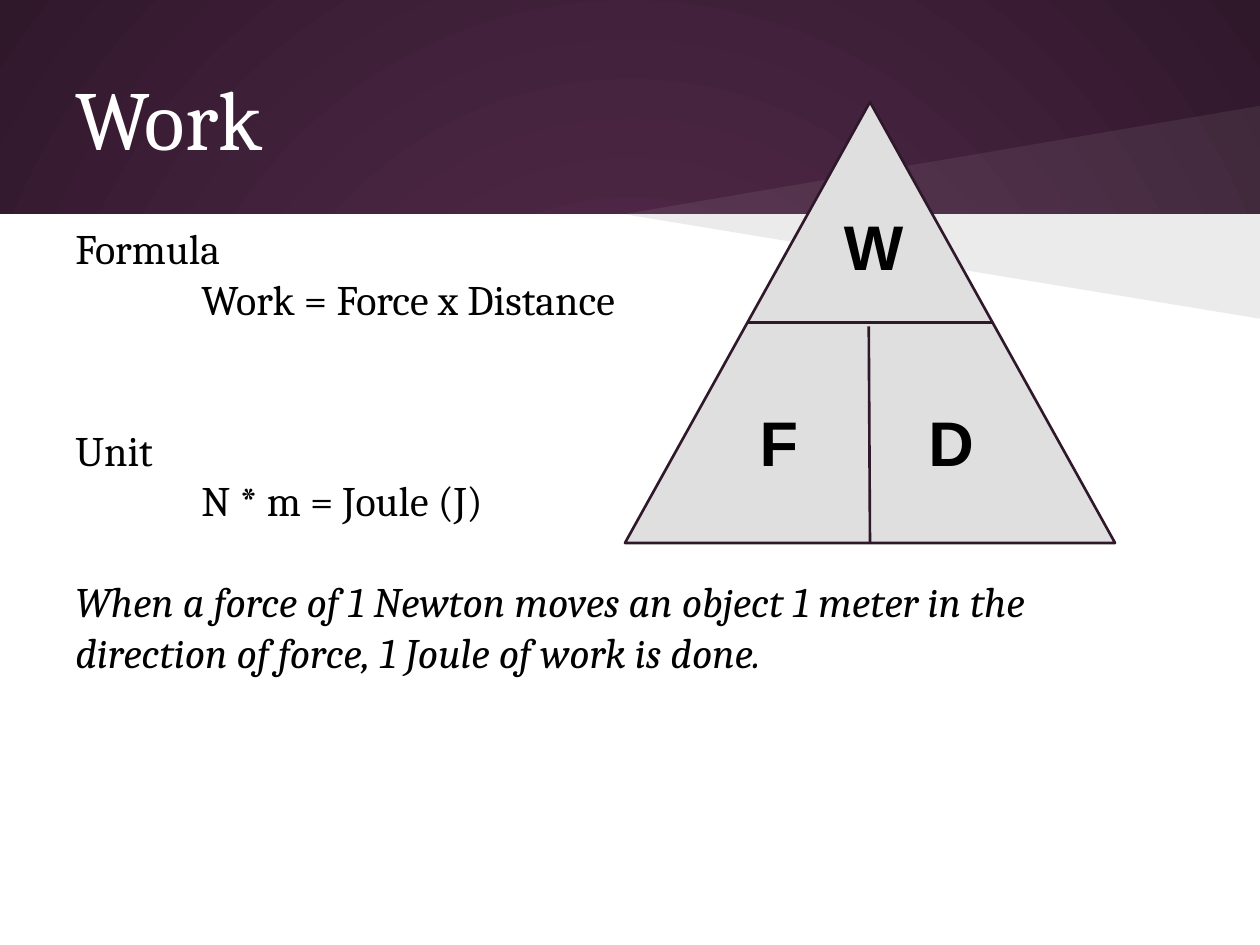
from lxml import etree
from pptx import Presentation, util as u
from pptx.dml.color import RGBColor
from pptx.enum import shapes, text
from pptx.oxml.ns import qn

WHITE = RGBColor(0xFF, 0xFF, 0xFF)
BLACK = RGBColor(0x00, 0x00, 0x00)
GREY = RGBColor(0xDF, 0xDF, 0xDF)
PLUM = RGBColor(0x59, 0x2D, 0x50)
DARK_PLUM = RGBColor(0x30, 0x18, 0x2B)

CELL = u.Inches(0.1)  # the grid has 100 columns and 75 rows
COLUMNS, ROWS = 100, 75
LINE_PITCH = 28.8  # points, one line of body text


def cells(*counts):
    return [u.Emu(round(count * CELL)) for count in counts]


class Canvas:
    """Holds the style and the current slide."""
    serif = {"name": "Cambria", "size": u.Pt(24)}
    title = {"name": "Cambria", "size": u.Pt(48)}
    letter = {"name": "Arial", "size": u.Pt(36), "bold": True}
    line_width = u.Pt(1.5)

    def __init__(self, deck):
        self.page = deck.slides.add_slide(deck.slide_layouts[6])

    def background(self, inner, outer):
        fill = self.page.background.fill
        fill.gradient()
        for stop, color in zip(fill.gradient_stops, (inner, outer)):
            stop.color.rgb = color
        gradient = self.page.element.find(".//" + qn("a:gradFill"))
        gradient.remove(gradient.find(qn("a:lin")))
        circle = etree.SubElement(gradient, qn("a:path"), path="circle")
        etree.SubElement(circle, qn("a:fillToRect"),
                         {side: "50000" for side in "ltrb"})

    def paint(self, shape, color, line=None, opacity=None):
        shape.shadow.inherit = False
        shape.fill.solid()
        shape.fill.fore_color.rgb = color
        if opacity is not None:
            tint = shape._element.spPr.find(".//" + qn("a:srgbClr"))
            etree.SubElement(tint, qn("a:alpha"), val=str(opacity * 1000))
        if line is None:
            shape.line.fill.background()
        else:
            shape.line.color.rgb = line
            shape.line.width = self.line_width

    def preset(self, kind, place, color, line=None):
        self.paint(self.page.shapes.add_shape(kind, *cells(*place)), color, line)

    def outline(self, points, color, opacity):
        start, *others = [cells(*point) for point in points]
        builder = self.page.shapes.build_freeform(*start)
        builder.add_line_segments(others)
        self.paint(builder.convert_to_shape(), color, opacity=opacity)

    def line(self, start, end, color):
        link = self.page.shapes.add_connector(
            shapes.MSO_CONNECTOR.STRAIGHT, *cells(*start, *end))
        link.line.color.rgb = color
        link.line.width = self.line_width
        etree.SubElement(link._element.spPr, qn("a:effectLst"))

    def text_box(self, place, lines, style, color=BLACK, anchor=text.MSO_ANCHOR.TOP):
        """Each line is (words, blank lines before, indent in cells, italic)."""
        frame = self.page.shapes.add_textbox(*cells(*place)).text_frame
        layout = {"word_wrap": True, "vertical_anchor": anchor}
        layout.update({f"margin_{side}": CELL
                       for side in ("left", "top", "right", "bottom")})
        for name, value in layout.items():
            setattr(frame, name, value)
        for index, (words, gap, indent, italic) in enumerate(lines):
            para = frame.add_paragraph() if index else frame.paragraphs[0]
            para.space_before = u.Pt(gap * LINE_PITCH)
            if indent:
                para._p.get_or_add_pPr().set("marL", str(indent * CELL))
            span = para.add_run()
            span.text = words
            for name, value in {**style, "italic": italic}.items():
                setattr(span.font, name, value)
            span.font.color.rgb = color


def main():
    deck = Presentation()
    deck.slide_width, deck.slide_height = cells(COLUMNS, ROWS)
    canvas = Canvas(deck)

    # Plum header above a white page, with two light beams
    header = 17
    canvas.background(PLUM, DARK_PLUM)
    canvas.preset(shapes.MSO_SHAPE.RECTANGLE,
                  (0, header, COLUMNS, ROWS - header), WHITE)
    for rise, color, opacity in ((-8.6, WHITE, 7), (8.3, BLACK, 8)):
        canvas.outline([(COLUMNS, header), (49.5, header),
                        (COLUMNS, header + rise)], color, opacity)

    # Title and body
    canvas.text_box((5, 3, 90, 12.5), [("Work", 0, 0, False)],
                    canvas.title, WHITE, text.MSO_ANCHOR.MIDDLE)
    canvas.text_box((5, 16.7, 90, 54.3), [
        ("Formula", 0, 0, False),
        ("Work = Force x Distance", 0, 10, False),
        ("Unit", 2, 0, False),
        ("N * m = Joule (J)", 0, 10, False),
        ("When a force of 1 Newton moves an object 1 meter in the "
         "direction of force, 1 Joule of work is done.", 1, 0, True),
    ], canvas.serif)

    # Formula triangle, split at half its height
    left, top, width, height = triangle = (49.6, 8.1, 38.9, 35)
    middle, split = left + width / 2, top + height / 2
    canvas.preset(shapes.MSO_SHAPE.ISOSCELES_TRIANGLE, triangle, GREY, DARK_PLUM)
    canvas.line((middle - width / 4, split), (middle + width / 4, split), DARK_PLUM)
    canvas.line((middle, top + height), (middle - 0.1, split + 0.3), DARK_PLUM)
    for words, column, row in (("W", 66, 15.5), ("F", 59.3, 31), ("D", 72.7, 31)):
        canvas.text_box((column, row, 6, 9), [(words, 0, 0, False)], canvas.letter)

    deck.save("out.pptx")


if __name__ == "__main__":
    main()
